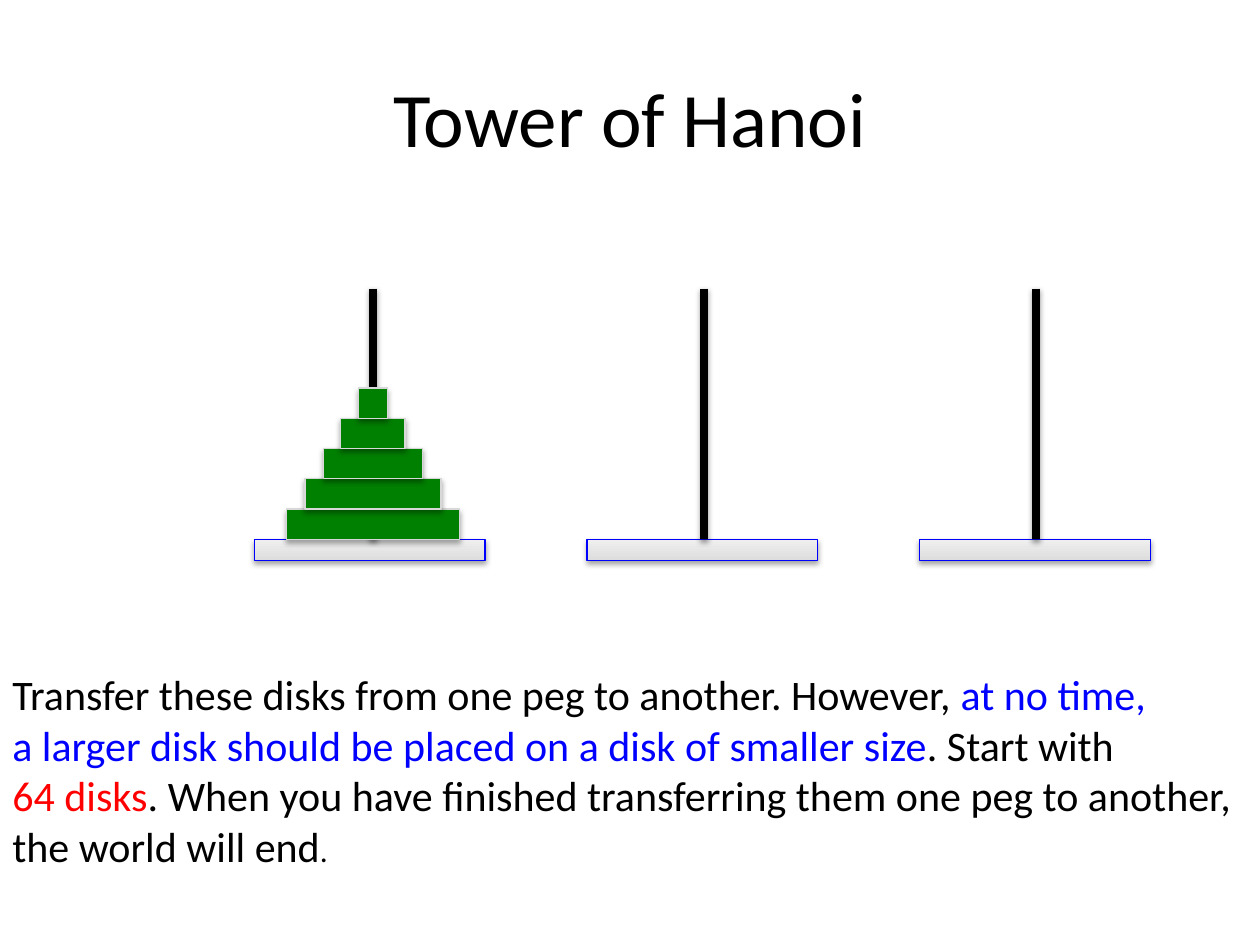
from dataclasses import dataclass

from lxml.etree import SubElement
from pptx import Presentation
from pptx.dml.color import RGBColor as RGB
from pptx.enum.shapes import MSO_CONNECTOR as CONN, MSO_SHAPE as SHAPE
from pptx.enum.text import MSO_ANCHOR as ANCHOR, MSO_AUTO_SIZE as FIT, PP_ALIGN as ALIGN
from pptx.oxml.ns import qn
from pptx.util import Inches, Pt


@dataclass(frozen=True)
class Theme:
    font: str = "Calibri"
    black: RGB = RGB(0, 0, 0)
    blue: RGB = RGB(0, 0, 255)
    red: RGB = RGB(255, 0, 0)
    disk: RGB = RGB(0, 128, 0)
    disk_edge: RGB = RGB(0xD8, 0xD8, 0xD8)
    base_dark: RGB = RGB(0xDD, 0xDD, 0xDD)
    base_light: RGB = RGB(0xEF, 0xEF, 0xEF)
    title: Pt = Pt(44)
    body: Pt = Pt(24)
    small: Pt = Pt(18)


T = Theme()


def add_run(p, text, color, size):
    r = p.add_run()
    r.text = text
    r.font.name, r.font.size = T.font, size
    r.font.color.rgb = color


def add_shadow(sp, alpha, dist):
    """Give a shape or connector a soft shadow that falls straight down."""
    effects = SubElement(sp._element.spPr, qn("a:effectLst"))
    outer = SubElement(effects, qn("a:outerShdw"), blurRad=str(Pt(3.1)),
                       dist=str(Pt(dist)), dir="5400000", rotWithShape="0")
    color = SubElement(outer, qn("a:srgbClr"), val=str(T.black))
    SubElement(color, qn("a:alpha"), val=str(alpha * 1000))


prs = Presentation()
prs.slide_width, prs.slide_height = Inches(10), Inches(7.5)
slide = prs.slides.add_slide(prs.slide_layouts[5])
shapes = slide.shapes

# Title
title = shapes.title
title.left, title.top = Inches(0.5), Inches(0.3)
title.width, title.height = Inches(9), Inches(1.25)
tf = title.text_frame
tf.vertical_anchor = ANCHOR.MIDDLE
tf.paragraphs[0].alignment = ALIGN.CENTER
add_run(tf.paragraphs[0], "Tower of Hanoi", T.black, T.title)

# Bases and pegs
FLOOR = 4.28
PEG_X = 2.96
for i in range(3):
    base = shapes.add_shape(SHAPE.RECTANGLE, Inches(2.02 + 2.64 * i), Inches(FLOOR),
                            Inches(1.83), Inches(0.17))
    base.fill.gradient()
    base.fill.gradient_angle = 90
    for stop, color in zip(base.fill.gradient_stops, (T.base_dark, T.base_light)):
        stop.color.rgb = color
    stops = base.fill.gradient_stops
    stops[0].position, stops[1].position = 0, 1
    base.line.color.rgb = T.blue
    base.line.width = Pt(0.75)
    add_shadow(base, 35, 1.8)

for i in range(3):
    x = Inches(PEG_X + 2.63 * i)
    peg = shapes.add_connector(CONN.STRAIGHT, x, Inches(2.29), x, Inches(FLOOR))
    peg.line.color.rgb = T.black
    peg.line.width = Pt(4.5)
    add_shadow(peg, 38, 1.6)

# Disks, from the largest at the bottom to the smallest
DISK_H = 0.24
for level, width in enumerate((1.37, 1.08, 0.79, 0.51, 0.23), start=1):
    disk = shapes.add_shape(SHAPE.RECTANGLE, Inches(PEG_X - width / 2),
                            Inches(FLOOR - DISK_H * level), Inches(width), Inches(DISK_H))
    disk.fill.solid()
    disk.fill.fore_color.rgb = T.disk
    disk.line.color.rgb = T.disk_edge
    disk.line.width = Pt(0.75)
    add_shadow(disk, 35, 1.8)

# Rules of the puzzle
rules = [
    [("Transfer these disks from one peg to another. However, ", T.black, T.body),
     ("at no time,", T.blue, T.body)],
    [("a larger disk should be placed on a disk of smaller size", T.blue, T.body),
     (". Start with", T.black, T.body)],
    [("64 disks", T.red, T.body),
     (". When you have finished transferring them one peg to another,", T.black, T.body)],
    [("the world will end", T.black, T.body), (".", T.black, T.small)],
]
box = shapes.add_textbox(Inches(0), Inches(5.26), Inches(9.97), Inches(1.72))
tf = box.text_frame
tf.word_wrap = False
tf.auto_size = FIT.SHAPE_TO_FIT_TEXT
for i, runs in enumerate(rules):
    p = tf.add_paragraph() if i else tf.paragraphs[0]
    for text, color, size in runs:
        add_run(p, text, color, size)

prs.save("out.pptx")
